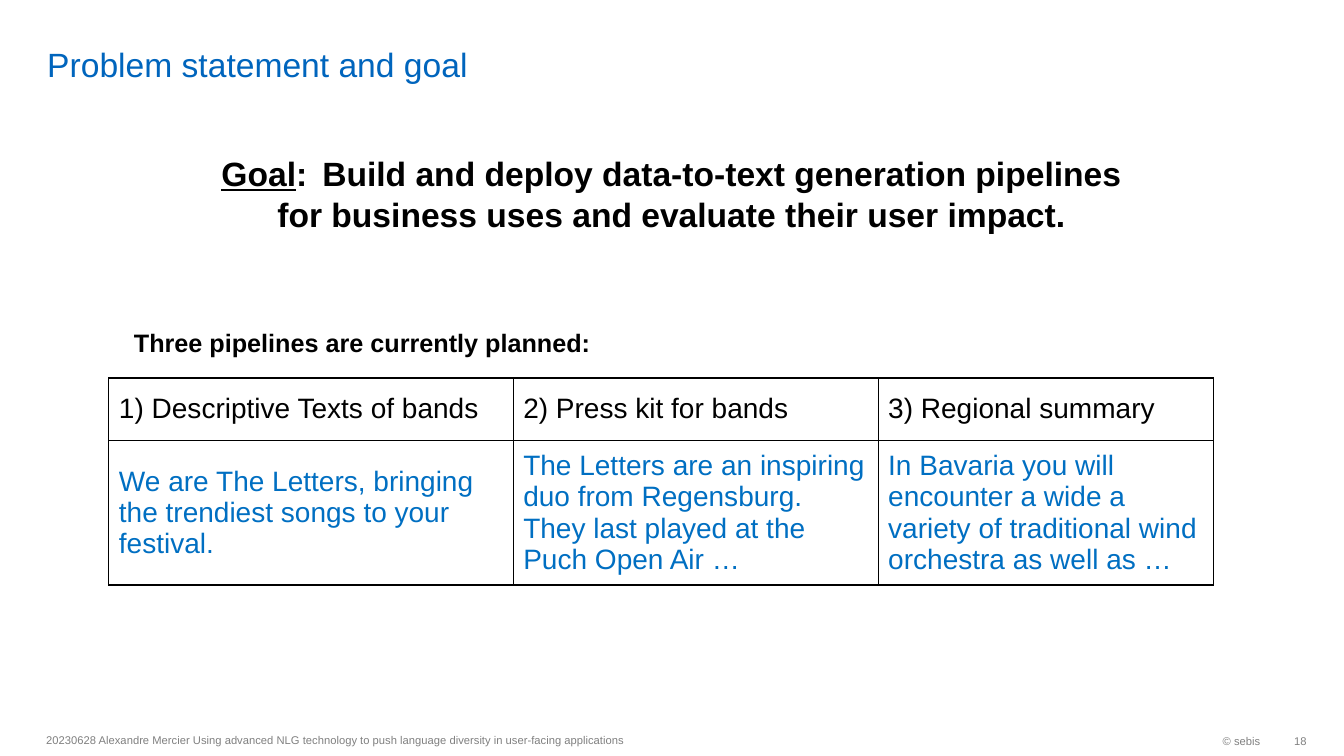
from dataclasses import dataclass, field
from typing import Any

from lxml.etree import SubElement
from pptx import Presentation
from pptx.dml.color import RGBColor
from pptx.enum.text import MSO_ANCHOR, MSO_AUTO_SIZE, PP_ALIGN
from pptx.oxml import parse_xml
from pptx.oxml.ns import nsdecls, qn
from pptx.slide import Slide
from pptx.table import _Cell
from pptx.text.text import _Paragraph
from pptx.util import Inches, Pt

BLACK, GRAY, TITLE_BLUE, EXAMPLE_BLUE = "000000", "808080", "0065BD", "006FC2"


@dataclass
class Words:
    text: str
    size: float
    color: str = BLACK
    style: dict[str, Any] = field(default_factory=dict)


@dataclass
class Label:
    box: tuple[float, float, float, float]
    words: list[Words]
    align: PP_ALIGN = PP_ALIGN.LEFT
    tab: float | None = None
    frame: dict[str, Any] = field(default_factory=dict)


@dataclass
class Pipeline:
    name: str
    example: str
    width: float


FOOTER = {"vertical_anchor": MSO_ANCHOR.MIDDLE}
FOOTER_RIGHT = FOOTER | {"word_wrap": False}
GROWING = {"auto_size": MSO_AUTO_SIZE.SHAPE_TO_FIT_TEXT}
BOLD = {"bold": True}

LABELS = [
    Label((0.37, 0.05, 11.58, 0.79),
          [Words("Problem statement and goal", 24, TITLE_BLUE)],
          frame={"vertical_anchor": MSO_ANCHOR.BOTTOM, "margin_top": 0, "margin_bottom": 0}),
    Label((10.26, 7.19, 2.34, 0.32), [Words("© sebis", 8, GRAY)],
          PP_ALIGN.RIGHT, frame=FOOTER_RIGHT),
    Label((0.36, 7.18, 6.3, 0.32),
          [Words("20230628 Alexandre Mercier Using advanced NLG technology to push "
                 "language diversity in user-facing applications", 8, GRAY)],
          frame=FOOTER),
    Label((12.6, 7.19, 0.36, 0.32), [Words("18", 8, GRAY)],
          PP_ALIGN.RIGHT, frame=FOOTER_RIGHT | {"margin_right": 0}),
    Label((2.08, 1.47, 9.16, 0.91),
          [Words("Goal", 24, style=BOLD | {"underline": True}),
           Words(": \tBuild and deploy data-to-text generation pipelines for business "
                 "uses and evaluate their user impact.", 24, style=BOLD)],
          PP_ALIGN.CENTER, tab=0.78, frame=GROWING),
    Label((1.23, 3.2, 8.85, 0.4),
          [Words("Three pipelines are currently planned:", 18, style=BOLD)],
          frame=GROWING),
]

PIPELINES = [
    Pipeline("1) Descriptive Texts of bands",
             "We are The Letters, bringing the trendiest songs to your festival.", 4.01),
    Pipeline("2) Press kit for bands",
             "The Letters are an inspiring duo from Regensburg. "
             "They last played at the Puch Open Air …", 3.62),
    Pipeline("3) Regional summary",
             "In Bavaria you will encounter a wide a variety of traditional wind "
             "orchestra as well as …", 3.33),
]
ROW_HEIGHTS = (0.62, 1.43)


def rgb(color: str) -> RGBColor:
    return RGBColor.from_string(color)


def apply(target: Any, values: dict[str, Any]) -> None:
    for name, value in values.items():
        setattr(target, name, value)


def write(paragraph: _Paragraph, words: Words) -> None:
    run = paragraph.add_run()
    run.text = words.text
    apply(run.font, {"name": "Arial", "size": Pt(words.size), "bold": False} | words.style)
    run.font.color.rgb = rgb(words.color)


def draw_label(slide: Slide, label: Label) -> None:
    text_frame = slide.shapes.add_textbox(*map(Inches, label.box)).text_frame
    apply(text_frame, {"word_wrap": True} | label.frame)
    paragraph = text_frame.paragraphs[0]
    paragraph.alignment = label.align
    if label.tab is not None:
        stops = SubElement(paragraph._p.get_or_add_pPr(), qn("a:tabLst"))
        SubElement(stops, qn("a:tab"), pos=str(Inches(label.tab)), algn="l")
    for words in label.words:
        write(paragraph, words)


def draw_borders(cell: _Cell) -> None:
    properties = cell._tc.get_or_add_tcPr()
    for position, side in enumerate(("lnL", "lnR", "lnT", "lnB")):
        properties.insert(position, parse_xml(
            f'<a:{side} {nsdecls("a")} w="{Pt(1)}"><a:solidFill>'
            f'<a:srgbClr val="{BLACK}"/></a:solidFill></a:{side}>'))


def draw_pipelines(slide: Slide, pipelines: list[Pipeline]) -> None:
    width = sum(pipeline.width for pipeline in pipelines)
    table = slide.shapes.add_table(
        len(ROW_HEIGHTS), len(pipelines), Inches(1.08), Inches(3.75),
        Inches(width), Inches(sum(ROW_HEIGHTS))).table
    apply(table, {"first_row": False, "horz_banding": False})
    for row, height in zip(table.rows, ROW_HEIGHTS):
        row.height = Inches(height)
    for column, pipeline in enumerate(pipelines):
        table.columns[column].width = Inches(pipeline.width)
        entries = (Words(pipeline.name, 20), Words(pipeline.example, 20, EXAMPLE_BLUE))
        for row, words in enumerate(entries):
            cell = table.cell(row, column)
            cell.vertical_anchor = MSO_ANCHOR.MIDDLE
            cell.fill.background()
            draw_borders(cell)
            write(cell.text_frame.paragraphs[0], words)


def main() -> None:
    deck = Presentation()
    apply(deck, {"slide_width": Inches(13.33), "slide_height": Inches(7.5)})
    slide = deck.slides.add_slide(deck.slide_layouts[6])
    for label in LABELS:
        draw_label(slide, label)
    draw_pipelines(slide, PIPELINES)
    deck.save("out.pptx")


if __name__ == "__main__":
    main()
